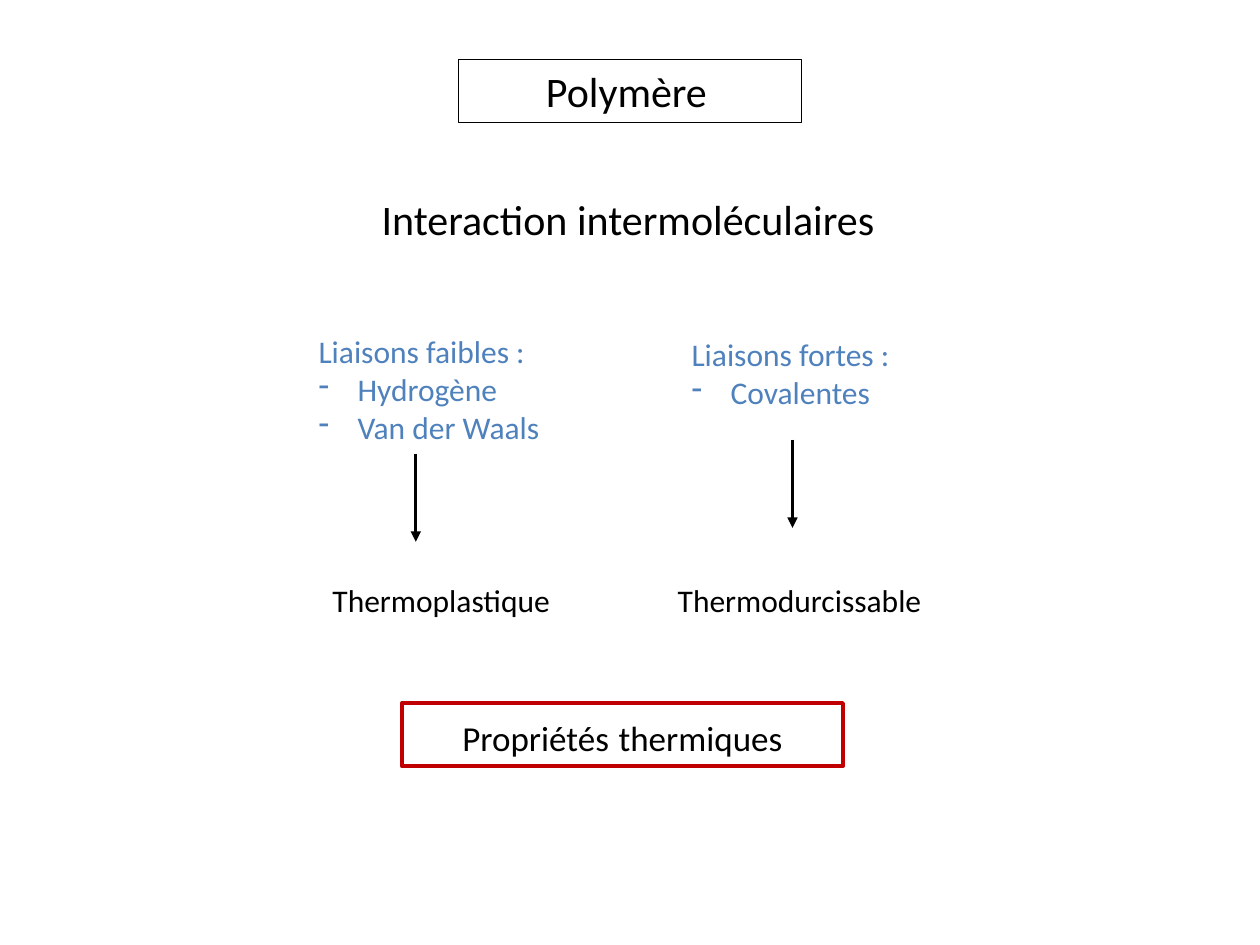
from lxml import etree
from pptx import Presentation, util as u
from pptx.dml.color import RGBColor
from pptx.enum import shapes, text
from pptx.oxml import ns

COLORS = {"ink": "000000", "accent": "4F81BD", "frame": "C00000"}
FONT = "Calibri"

# Content: places are percentages of the slide (left, top, width, height)
HEADINGS = [
    {"place": (36.4, 6.27, 27.2, 6.67), "runs": [("Polymère", 24), (" ", 18)],
     "border": ("ink", 0.75)},
    {"place": (28.2, 19.87, 43.3, 6.67),
     "runs": [("Interaction intermoléculaires", 24)], "border": None},
    {"place": (31.9, 74.4, 35, 6.67),
     "runs": [("Propriétés", 20), (" ", 24), ("thermiques", 20)],
     "border": ("frame", 2.25)},
]
BRANCHES = [
    {"bonds": "Liaisons faibles :", "kinds": ["Hydrogène", "Van der Waals"],
     "bonds_place": (24.3, 34.53, 28.3, 13.47), "arrow_start": (33, 48),
     "family": "Thermoplastique", "family_place": (25.4, 60.8, 19.5, 5.33)},
    {"bonds": "Liaisons fortes :", "kinds": ["Covalentes"],
     "bonds_place": (53.9, 34.8, 28.3, 9.47), "arrow_start": (62.9, 46.53),
     "family": "Thermodurcissable", "family_place": (52.8, 60.8, 29.1, 5.33)},
]
ARROW_LENGTH = 9.33
BODY_SIZE = 18
DASH_INDENT = u.Inches(0.31)

deck = Presentation()
deck.slide_width, deck.slide_height = u.Inches(10), u.Inches(7.5)
slide = deck.slides.add_slide(deck.slide_layouts[6])


def across(share):
    return round(deck.slide_width * share / 100)


def down(share):
    return round(deck.slide_height * share / 100)


def rgb(color):
    return RGBColor.from_string(COLORS[color])


def add_box(place, paragraphs, color="ink", align=text.PP_ALIGN.LEFT, border=None):
    """Each paragraph is (runs, dashed); each run is (wording, size)."""
    left, top, width, height = place
    frame = across(left), down(top), across(width), down(height)
    if border:
        box = slide.shapes.add_shape(shapes.MSO_SHAPE.RECTANGLE, *frame)
        box.shadow.inherit = False
        box.fill.background()
        box.line.color.rgb = rgb(border[0])
        box.line.width = u.Pt(border[1])
    else:
        box = slide.shapes.add_textbox(*frame)
    body = box.text_frame
    body.word_wrap = True
    body.auto_size = text.MSO_AUTO_SIZE.SHAPE_TO_FIT_TEXT
    body.vertical_anchor = text.MSO_ANCHOR.TOP
    for index, (runs, dashed) in enumerate(paragraphs):
        paragraph = body.add_paragraph() if index else body.paragraphs[0]
        paragraph.alignment = align
        if dashed:
            props = paragraph._p.get_or_add_pPr()
            props.set("marL", str(DASH_INDENT))
            props.set("indent", str(-DASH_INDENT))
            etree.SubElement(props, ns.qn("a:buFontTx"))
            etree.SubElement(props, ns.qn("a:buChar")).set("char", "-")
        for wording, size in runs:
            run = paragraph.add_run()
            run.text = wording
            run.font.name = FONT
            run.font.size = u.Pt(size)
            run.font.color.rgb = rgb(color)


def add_arrow(x, y):
    arrow = slide.shapes.add_connector(
        shapes.MSO_CONNECTOR.STRAIGHT,
        across(x), down(y), across(x), down(y + ARROW_LENGTH))
    arrow.line.color.rgb = rgb("ink")
    arrow.line.width = u.Pt(1.5)
    line = arrow.line._get_or_add_ln()
    etree.SubElement(line, ns.qn("a:tailEnd")).set("type", "triangle")
    etree.SubElement(arrow._element.spPr, ns.qn("a:effectLst"))


# Title, subject and conclusion
for heading in HEADINGS:
    add_box(heading["place"], [(heading["runs"], False)],
            align=text.PP_ALIGN.CENTER, border=heading["border"])

# Bond types, each leading to a polymer family
for branch in BRANCHES:
    add_box(branch["family_place"], [([(branch["family"], BODY_SIZE)], False)])
    bonds = [([(branch["bonds"], BODY_SIZE)], False)]
    bonds += [([(kind, BODY_SIZE)], True) for kind in branch["kinds"]]
    add_box(branch["bonds_place"], bonds, color="accent")
    add_arrow(*branch["arrow_start"])

deck.save("out.pptx")
